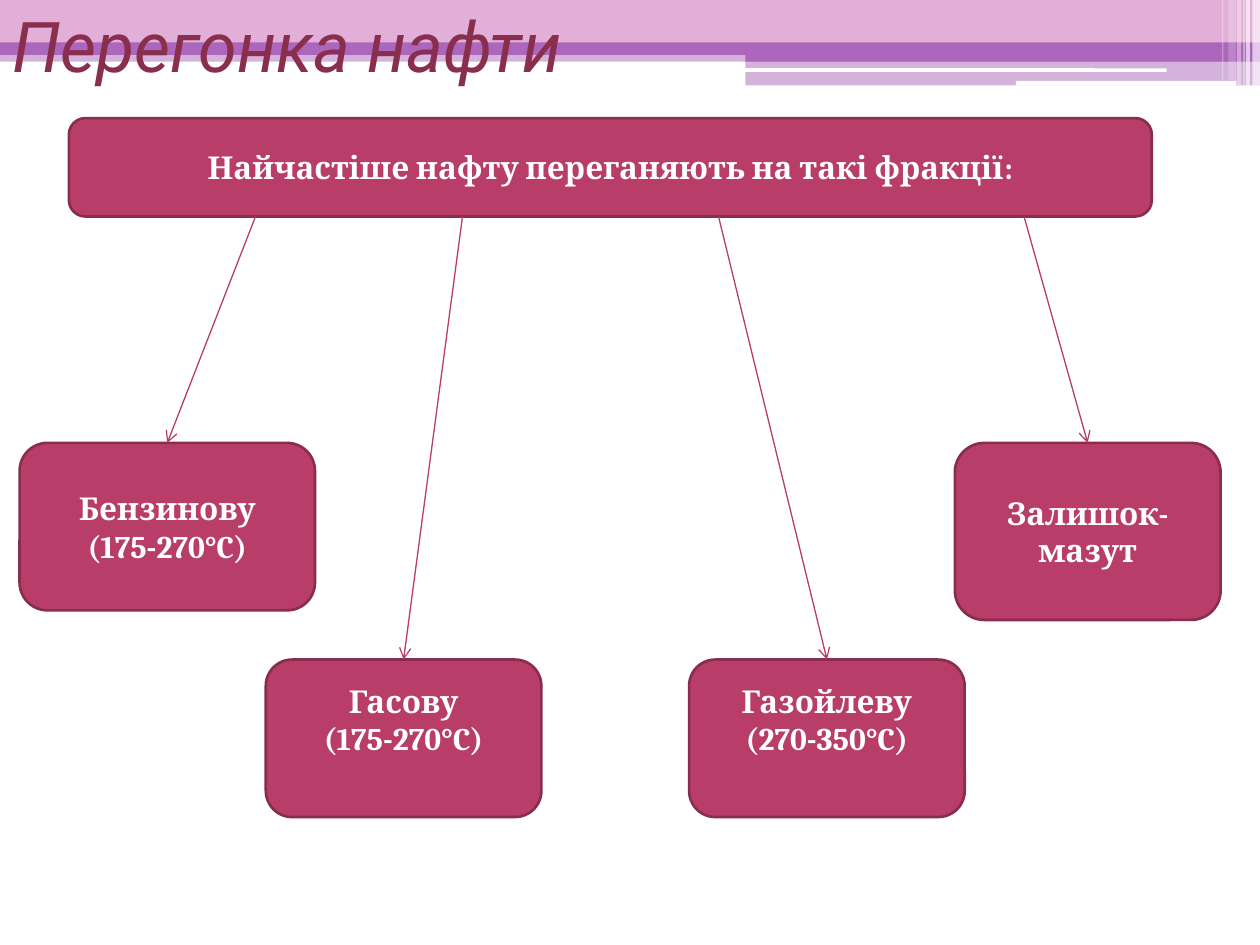
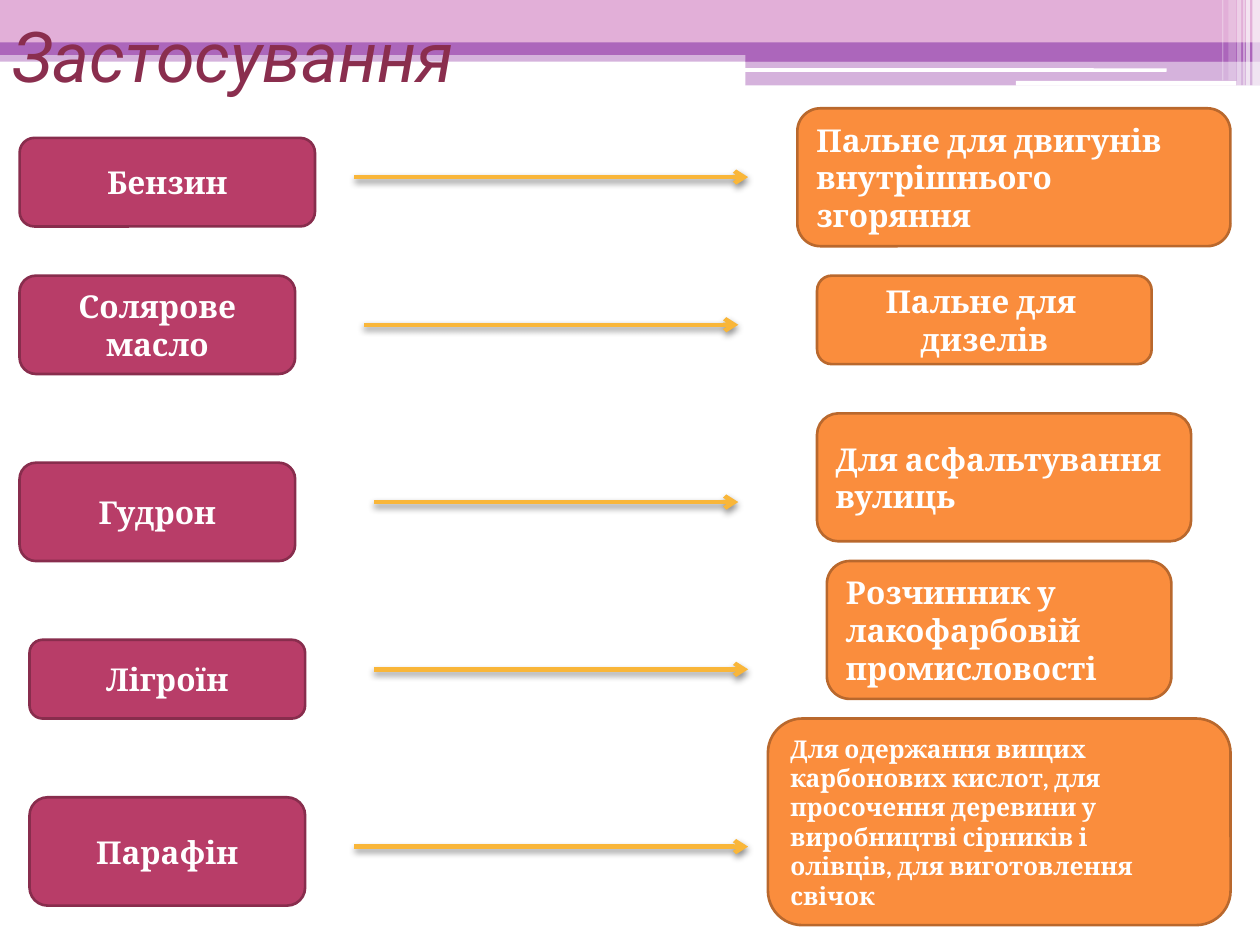
"""Build two slides on oil distillation: its fractions and their uses."""
from lxml.etree import SubElement
from pptx import Presentation
from pptx.dml.color import RGBColor
from pptx.enum.shapes import MSO_CONNECTOR, MSO_SHAPE
from pptx.enum.text import MSO_ANCHOR, PP_ALIGN
from pptx.oxml.ns import qn
from pptx.util import Pt

COLORS = {
    "pink": "E2AFD8", "violet": "AC66BB", "white": "FFFFFF", "title": "8A2E4E",
    "berry": "B83D68", "berry_edge": "882D4D",
    "orange": "FA8D3D", "orange_edge": "B9682D",
    "gold": "F9B639", "black": "000000",
}
RGB = {name: RGBColor.from_string(value) for name, value in COLORS.items()}
BOX_FONT = {"name": "Cambria", "bold": True}
TITLE_FONT = {"name": "Roboto", "size": Pt(40), "italic": True}
TITLE_FRAME = {"word_wrap": True, "vertical_anchor": MSO_ANCHOR.MIDDLE,
               "margin_top": 0, "margin_bottom": 0}
CENTER, LEFT = PP_ALIGN.CENTER, PP_ALIGN.LEFT
RECT, ROUND = MSO_SHAPE.RECTANGLE, MSO_SHAPE.ROUNDED_RECTANGLE
ALTERNATE = MSO_SHAPE.FLOWCHART_ALTERNATE_PROCESS

BANDS = [
    (RECT, 0, 28.8, 720, 6.5, "violet", 50),
    (RECT, 0, 0, 720, 24.5, "pink", 100),
    (RECT, 0, 24.2, 720, 7.2, "violet", 100),
    (RECT, 426, 28, 294, 7.2, "violet", 100),
    (RECT, 426, 34.6, 294, 14.2, "violet", 50),
    (ROUND, 425.5, 39, 241.2, 2, "white", 100),
    (ROUND, 580.5, 46.2, 126, 2.7, "white", 100),
    (RECT, 715.7, 0, 4.3, 49, "white", 65),
    (RECT, 712, 0, 2.2, 49, "white", 65),
    (RECT, 710.5, 0, 0.7, 49, "white", 60),
    (RECT, 707, 0, 2.2, 49, "white", 40),
    (RECT, 702, 0, 4.3, 46, "white", 20),
    (RECT, 698.4, 0, 0.7, 46, "white", 30),
]


def add_box(slide, kind, place, color, lines, align=CENTER, size=18, bottom=3.6):
    shape = slide.shapes.add_shape(kind, *map(Pt, place))
    shape.shadow.inherit = False
    shape.fill.solid()
    shape.fill.fore_color.rgb = RGB[color]
    shape.line.color.rgb = RGB[color + "_edge"]
    shape.line.width = Pt(1.5)
    frame = shape.text_frame
    frame.word_wrap = True
    frame.margin_bottom = Pt(bottom)
    for index, line in enumerate(lines):
        paragraph = frame.add_paragraph() if index else frame.paragraphs[0]
        paragraph.alignment = align
        run = paragraph.add_run()
        run.text = line
        run.font.size = Pt(size)
        run.font.color.rgb = RGB["white"]
        for name, value in BOX_FONT.items():
            setattr(run.font, name, value)
    return shape


def add_arrow(slide, start, end, color, width):
    arrow = slide.shapes.add_connector(MSO_CONNECTOR.STRAIGHT, *map(Pt, start + end))
    arrow.line.color.rgb = RGB[color]
    arrow.line.width = Pt(width)
    SubElement(arrow.line._get_or_add_ln(), qn("a:tailEnd"), type="arrow")
    effects = SubElement(arrow._element.spPr, qn("a:effectLst"))
    return arrow, effects


presentation = Presentation()
presentation.slide_width, presentation.slide_height = Pt(720), Pt(540)

slides = []
for title, width, height in [("Перегонка нафти", 648, 51), ("Застосування", 320, 62)]:
    slide = presentation.slides.add_slide(presentation.slide_layouts[6])
    slides.append(slide)
    for kind, left, top, band_width, band_height, color, opacity in BANDS:
        band = slide.shapes.add_shape(kind, Pt(left), Pt(top), Pt(band_width), Pt(band_height))
        band.shadow.inherit = False
        band.line.fill.background()
        band.fill.solid()
        band.fill.fore_color.rgb = RGB[color]
        if opacity < 100:
            fill_color = band._element.spPr.find(qn("a:solidFill"))[0]
            SubElement(fill_color, qn("a:alpha"), val=str(opacity * 1000))
    title_box = slide.shapes.add_textbox(0, 0, Pt(width), Pt(height))
    for name, value in TITLE_FRAME.items():
        setattr(title_box.text_frame, name, value)
    run = title_box.text_frame.paragraphs[0].add_run()
    run.text = title
    run.font.color.rgb = RGB["title"]
    for name, value in TITLE_FONT.items():
        setattr(run.font, name, value)

fractions_slide, uses_slide = slides

add_box(fractions_slide, ALTERNATE, (39.4, 67.5, 618.8, 56.2), "berry",
        ["Найчастіше нафту переганяють на такі фракції:"])
FRACTIONS = [
    (146, ALTERNATE, (11.2, 253.1, 168.8, 95.7), ["Бензинову", "(175-270°C)"], 3.6),
    (264.3, ALTERNATE, (151.9, 376.9, 157.5, 90), ["Гасову", "(175-270°C)"], 25.2),
    (410.6, ROUND, (393.8, 376.9, 157.5, 90), ["Газойлеву", "(270-350°C)"], 25.2),
    (585.2, ROUND, (545.6, 253.1, 151.9, 101.2), ["Залишок-", "мазут"], 3.6),
]
for start_x, kind, place, lines, bottom in FRACTIONS:
    fraction = add_box(fractions_slide, kind, place, "berry", lines, bottom=bottom)
    arrow, _ = add_arrow(fractions_slide, (start_x, 123.8), place[:2], "berry", 0.75)
    arrow.end_connect(fraction, 0)

USES = [
    ("Бензин", (11.2, 78.8, 168.8, 50.6), (202.5, 427.5, 101.2),
     ["Пальне для двигунів", "внутрішнього згоряння"], (455.6, 61.9, 247.5, 78.8), LEFT, 18),
    ("Солярове масло", (11.2, 157.5, 157.5, 56.2), (208.1, 421.9, 185.6),
     ["Пальне для ", "дизелів"], (466.9, 157.5, 191.2, 50.6), CENTER, 18),
    ("Гудрон", (11.2, 264.4, 157.5, 56.2), (213.8, 421.9, 286.9),
     ["Для асфальтування вулиць"], (466.9, 236.2, 213.8, 73.1), LEFT, 18),
    ("Лігроїн", (16.9, 365.6, 157.5, 45), (213.8, 427.5, 382.5),
     ["Розчинник у лакофарбовій промисловості"], (472.5, 320.6, 196.9, 78.8), LEFT, 18),
    ("Парафін", (16.9, 455.6, 157.5, 61.9), (202.5, 427.5, 483.8),
     ["Для одержання вищих карбонових кислот, для просочення деревини у виробництві сірників і",
      "олівців, для виготовлення свічок"], (438.8, 410.6, 264.4, 118.1), LEFT, 14),
]
for product, product_place, (start_x, end_x, y), use, use_place, align, size in USES:
    add_box(uses_slide, ALTERNATE, product_place, "berry", [product])
    _, effects = add_arrow(uses_slide, (start_x, y), (end_x, y), "gold", 2.5)
    shadow = SubElement(effects, qn("a:outerShdw"), blurRad=str(Pt(4)), dist=str(Pt(2)),
                        dir="5400000", rotWithShape="0")
    shadow_color = SubElement(shadow, qn("a:srgbClr"), val=COLORS["black"])
    SubElement(shadow_color, qn("a:alpha"), val="45000")
    add_box(uses_slide, ALTERNATE, use_place, "orange", use, align, size)

presentation.save("out.pptx")
